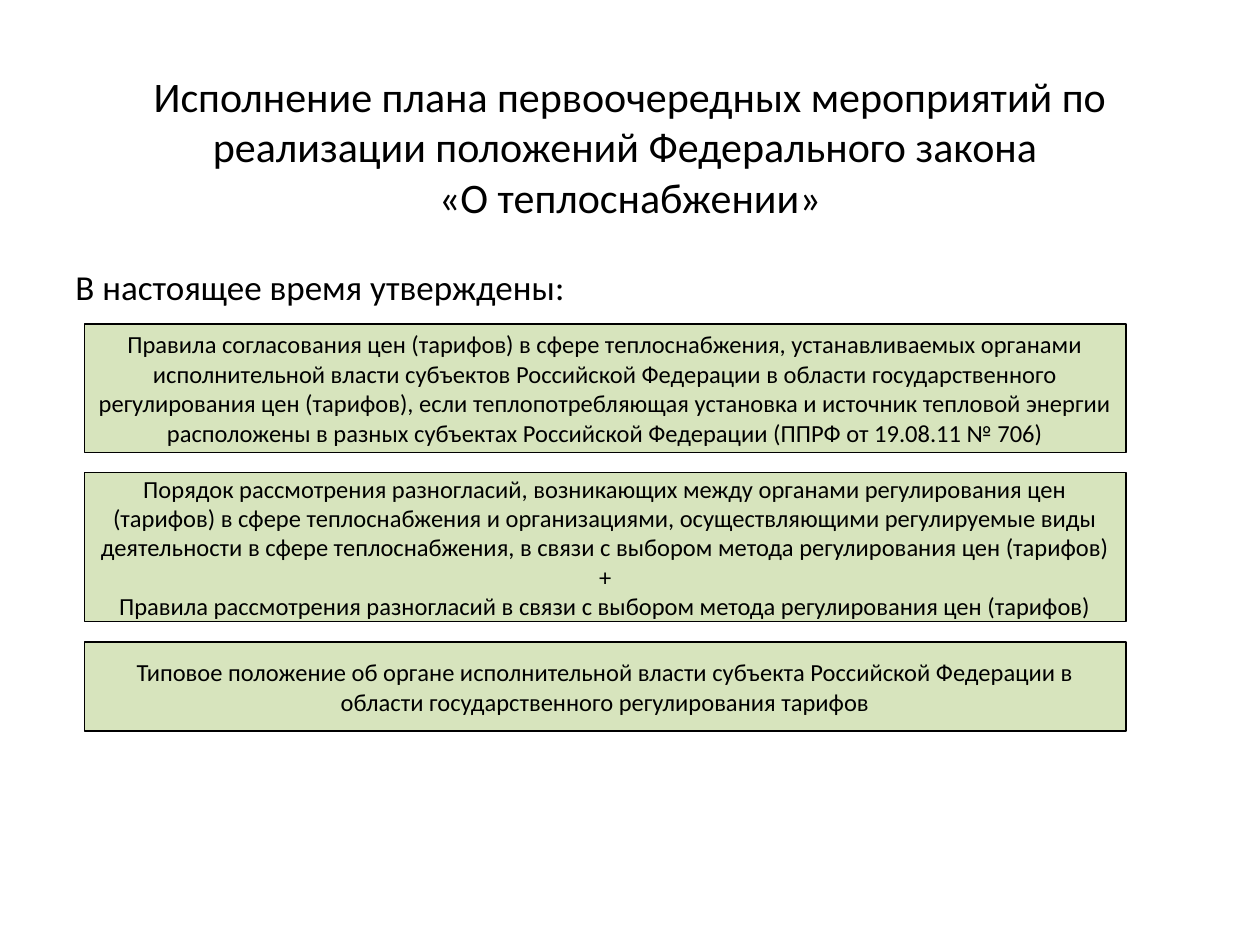
"""Build the slide on the plan for carrying out the heat supply law."""
from pptx import Presentation
from pptx import util as u
from pptx.dml import color
from pptx.enum import shapes, text

COLORS = {"text": "000000", "line": "000000", "box": "D7E4BD"}


def write(tf, content, size=14, align=text.PP_ALIGN.CENTER, anchor=text.MSO_ANCHOR.MIDDLE):
    """Fill a text frame, one paragraph per line of content."""
    tf.word_wrap = True
    tf.vertical_anchor = anchor
    tf.text = content
    for p in tf.paragraphs:
        p.alignment = align
        for r in p.runs:
            r.font.name = "Calibri"
            r.font.size = u.Pt(size)
            r.font.color.rgb = color.RGBColor.from_string(COLORS["text"])


prs = Presentation()
prs.slide_width, prs.slide_height = u.Cm(25.4), u.Cm(19.05)
s = prs.slides.add_slide(prs.slide_layouts[6])

title = s.shapes.add_textbox(u.Cm(1.27), u.Cm(1.35), u.Cm(22.86), u.Cm(3.18))
write(title.text_frame,
      "Исполнение плана первоочередных мероприятий по реализации положений "
      "Федерального закона \v«О теплоснабжении»", size=24)

intro = s.shapes.add_textbox(u.Cm(1.27), u.Cm(5.23), u.Cm(22.86), u.Cm(9.88))
write(intro.text_frame, "В настоящее время утверждены:", size=20,
      align=text.PP_ALIGN.LEFT, anchor=text.MSO_ANCHOR.TOP)

documents = [
    (2.59, "Правила согласования цен (тарифов) в сфере теплоснабжения, устанавливаемых "
           "органами исполнительной власти субъектов Российской Федерации в области "
           "государственного регулирования цен (тарифов), если теплопотребляющая установка "
           "и источник тепловой энергии расположены в разных субъектах Российской Федерации "
           "(ППРФ от 19.08.11 № 706)"),
    (3.0, "Порядок рассмотрения разногласий, возникающих между органами регулирования цен "
          "(тарифов) в сфере теплоснабжения и организациями, осуществляющими регулируемые "
          "виды деятельности в сфере теплоснабжения, в связи с выбором метода регулирования "
          "цен (тарифов)\n+\nПравила рассмотрения разногласий в связи с выбором метода "
          "регулирования цен (тарифов)"),
    (1.8, "Типовое положение об органе исполнительной власти субъекта Российской Федерации "
          "в области государственного регулирования тарифов"),
]
top, gap = 6.53, 0.41
for height, content in documents:
    sp = s.shapes.add_shape(shapes.MSO_SHAPE.RECTANGLE,
                            u.Cm(1.7), u.Cm(top), u.Cm(21), u.Cm(height))
    sp.shadow.inherit = False
    sp.fill.solid()
    sp.fill.fore_color.rgb = color.RGBColor.from_string(COLORS["box"])
    sp.line.color.rgb = color.RGBColor.from_string(COLORS["line"])
    sp.line.width = u.Pt(0.75)
    write(sp.text_frame, content)
    top += height + gap

prs.save("out.pptx")
